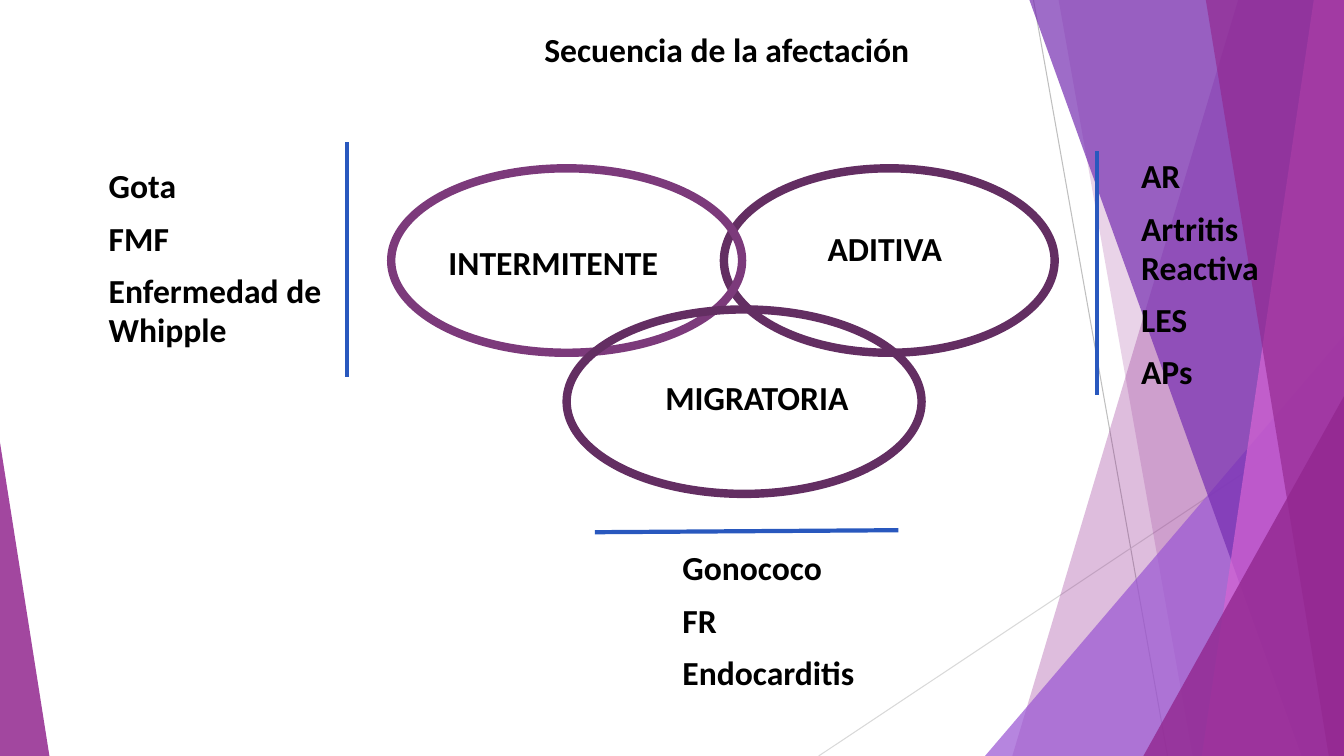
from dataclasses import dataclass

from lxml import etree
from pptx import Presentation
from pptx.dml.color import RGBColor
from pptx.enum.shapes import MSO_CONNECTOR, MSO_SHAPE
from pptx.oxml.ns import qn
from pptx.util import Inches, Pt

STRAIGHT = MSO_CONNECTOR.STRAIGHT
OVAL = MSO_SHAPE.OVAL
TRIANGLE = MSO_SHAPE.ISOSCELES_TRIANGLE


@dataclass(frozen=True)
class Theme:
    font: str = "Calibri"
    text_size: float = 24
    text: str = "000000"
    plum: str = "632E62"
    light_plum: str = "7C3A7B"
    rule: str = "2958BE"
    magenta: str = "92278F"
    lilac: str = "9B57D3"
    violet: str = "762EB1"
    pink: str = "D665D3"
    grey: str = "BFBFBF"
    pale_grey: str = "D9D9D9"
    ring_width: float = 6
    rule_width: float = 3
    hairline: float = 0.75
    line_spacing: float = 0.98
    item_gap: float = 9


THEME = Theme()


def add_line(page, start, end, color, width):
    ends = [Inches(value) for value in (*start, *end)]
    line = page.shapes.add_connector(STRAIGHT, *ends)
    line.line.color.rgb = RGBColor.from_string(color)
    line.line.width = Pt(width)
    etree.SubElement(line._element.spPr, qn("a:effectLst"))


def paint(shape, color, opacity):
    """Fill a borderless shape with a partly transparent colour."""
    shape.shadow.inherit = False
    shape.line.fill.background()
    shape.fill.solid()
    shape.fill.fore_color.rgb = RGBColor.from_string(color)
    tint = shape._element.spPr.find(qn("a:solidFill"))[0]
    etree.SubElement(tint, qn("a:alpha"), val=str(opacity * 1000))


def add_shard(page, box, top_x, bottom_x, color, opacity):
    """Fill the box to the right of a slanted edge."""
    left, top, width, height = box
    right, bottom = left + width, top + height
    corners = [(left + top_x, top), (right, top), (right, bottom), (left + bottom_x, bottom)]
    corners = [(Inches(x), Inches(y)) for x, y in corners]
    builder = page.shapes.build_freeform(*corners[0], scale=1.0)
    builder.add_line_segments(corners[1:], close=True)
    paint(builder.convert_to_shape(), color, opacity)


def add_corner(page, box, apex, color, opacity):
    triangle = page.shapes.add_shape(TRIANGLE, *map(Inches, box))
    triangle.adjustments[0] = apex
    paint(triangle, color, opacity)


def add_text(page, box, lines, inset_top=0.05, wrap=True):
    frame = page.shapes.add_textbox(*map(Inches, box)).text_frame
    frame_format = {
        "word_wrap": wrap,
        "margin_left": Inches(0.1),
        "margin_right": Inches(0.1),
        "margin_top": Inches(inset_top),
        "margin_bottom": Inches(0.05),
    }
    for name, value in frame_format.items():
        setattr(frame, name, value)
    font_format = {"name": THEME.font, "size": Pt(THEME.text_size), "bold": True}
    for index, line in enumerate(lines):
        para = frame.add_paragraph() if index else frame.paragraphs[0]
        para.line_spacing = THEME.line_spacing
        if index:
            para.space_before = Pt(THEME.item_gap)
        span = para.add_run()
        span.text = line
        for name, value in font_format.items():
            setattr(span.font, name, value)
        span.font.color.rgb = RGBColor.from_string(THEME.text)


def add_backdrop(page, box):
    """Overlapping shards on the right and a wedge in the lower left corner."""
    left, top, width, height = box
    right, bottom = left + width, top + height
    add_line(page, (left + 10.25, top), (left + 11.58, bottom), THEME.grey, THEME.hairline)
    add_line(page, (right, top + 4.03), (left + 8.12, bottom), THEME.pale_grey, THEME.hairline)
    add_shard(page, box, 12.28, 10.04, THEME.magenta, 30)
    add_shard(page, box, 10.5, 11.83, THEME.magenta, 20)
    add_corner(page, (right - 3.56, bottom - 4.17, 3.56, 4.17), 1, THEME.lilac, 72)
    add_shard(page, box, 10.21, 12.91, THEME.violet, 70)
    add_shard(page, box, 13.03, 11.92, THEME.pink, 70)
    add_shard(page, box, 11.96, 13.18, THEME.magenta, 65)
    add_corner(page, (right - 1.99, bottom - 3.57, 1.99, 3.57), 1, THEME.magenta, 80)
    add_corner(page, (left, bottom - 3.11, 0.49, 3.11), 0, THEME.magenta, 85)


def add_venn(page, box):
    """Three linked rings, each with its label."""
    left, top = box[:2]
    ring_height = 1.83
    rings = [
        # x, y, width, colour, label, label x, label y, label width
        (3.3, 0, 3.28, THEME.plum, "ADITIVA", 4.23, 0.56, 1.61),
        (0, 0, 3.48, THEME.light_plum, "INTERMITENTE", 0.47, 0.7, 2.7),
        (1.74, 1.4, 3.52, THEME.plum, "MIGRATORIA", 2.62, 2.04, 2.15),
    ]
    for x, y, width, color, *_ in rings:
        place = (left + x, top + y, width, ring_height)
        ring = page.shapes.add_shape(OVAL, *map(Inches, place))
        ring.shadow.inherit = False
        ring.fill.background()
        ring.line.color.rgb = RGBColor.from_string(color)
        ring.line.width = Pt(THEME.ring_width)
    for *_, label, x, y, width in rings:
        add_text(page, (left + x, top + y, width, 0.4), [label])


def add_examples(page, box, diseases, rule_start, rule_end):
    """A disease list and its rule, whose ends are offsets from the box."""
    left, top = box[:2]
    start, end = [(left + x, top + y) for x, y in (rule_start, rule_end)]
    add_line(page, start, end, THEME.rule, THEME.rule_width)
    add_text(page, box, diseases, inset_top=0.06)


def main():
    deck = Presentation()
    deck.slide_width, deck.slide_height = Inches(13.33), Inches(7.5)
    page = deck.slides.add_slide(deck.slide_layouts[6])

    add_backdrop(page, (0, 0, 13.33, 7.5))
    add_venn(page, (3.88, 1.67, 6.58, 3.23))

    # Examples for each pattern
    add_examples(page, (11.22, 1.5, 1.74, 2.32),
                 ["AR", "Artritis Reactiva", "LES", "APs"], (-0.34, 0), (-0.34, 2.42))
    add_examples(page, (6.67, 5.39, 2.25, 1.72),
                 ["Gonococo", "FR", "Endocarditis"], (2.24, -0.13), (-0.77, -0.11))
    add_examples(page, (0.98, 1.6, 2.59, 1.11),
                 ["Gota", "FMF", "Enfermedad de Whipple"], (2.46, -0.19), (2.46, 2.14))

    # Title
    add_text(page, (5.3, 0.26, 3.93, 0.5), ["Secuencia de la afectación"], wrap=False)
    deck.save("out.pptx")


if __name__ == "__main__":
    main()
